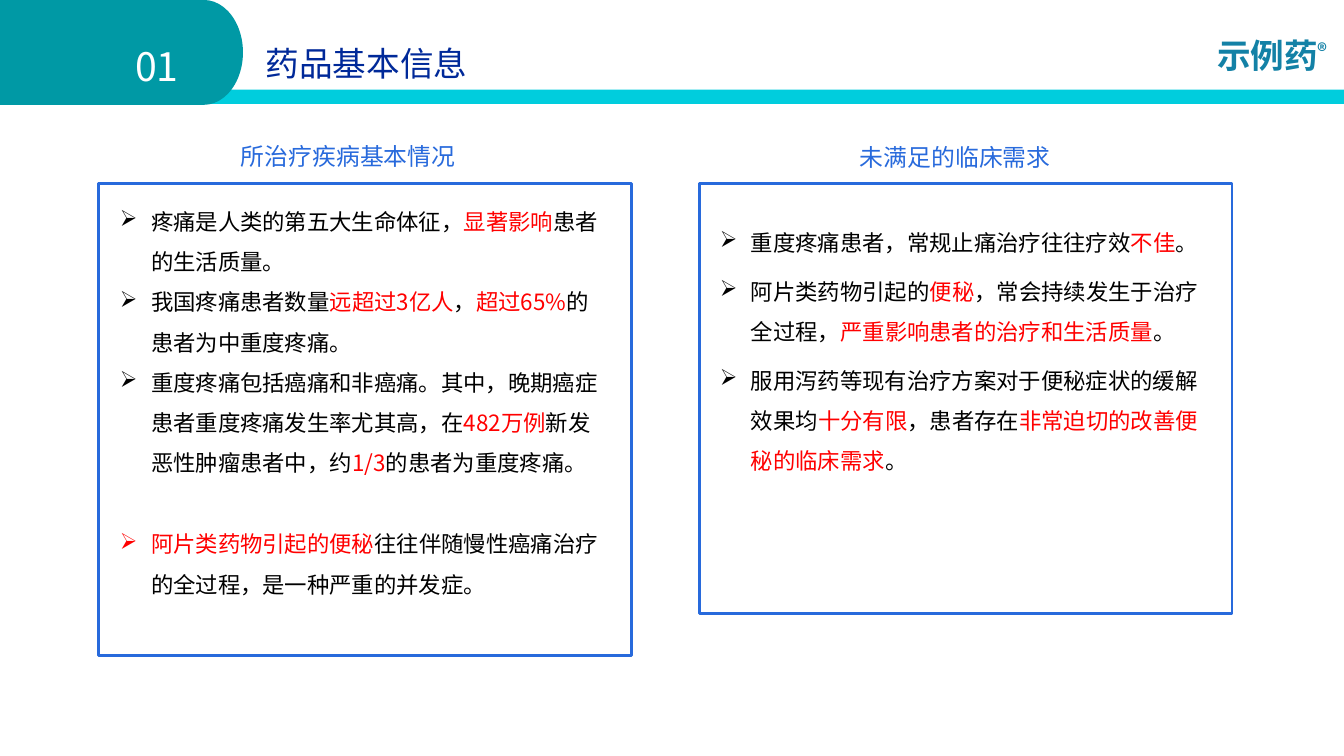
from lxml.etree import SubElement
from pptx import Presentation
from pptx.dml.color import RGBColor
from pptx.enum.shapes import MSO_SHAPE
from pptx.enum.text import MSO_AUTO_SIZE, PP_ALIGN
from pptx.oxml.ns import qn
from pptx.util import Emu, Pt

FONT = "Noto Sans CJK SC"
TEAL, CYAN, BLUE = "0099A5", "00CDDD", "286ADC"
RED, BLACK = "FF0000", "000000"

DISEASE = [
    "疼痛是人类的第五大生命体征，*显著影响*患者的生活质量。",
    "我国疼痛患者数量*远超过3亿人*，*超过65%*的患者为中重度疼痛。",
    "重度疼痛包括癌痛和非癌痛。其中，晚期癌症患者重度疼痛发生率尤其高，在"
    "*482万例*新发恶性肿瘤患者中，约*1/3*的患者为重度疼痛。",
    "*阿片类药物引起的便秘*往往伴随慢性癌痛治疗的全过程，是一种严重的并发症。",
]
NEEDS = [
    "重度疼痛患者，常规止痛治疗往往疗效*不佳*。",
    "阿片类药物引起的*便秘*，常会持续发生于治疗全过程，"
    "*严重影响患者的治疗和生活质量*。",
    "服用泻药等现有治疗方案对于便秘症状的缓解效果均*十分有限*，"
    "患者存在*非常迫切的改善便秘的临床需求*。",
]


def px(n):
    """Turn px, 100 to the inch, into EMU."""
    return Emu(n * 9144)


def paint(color, value):
    color.rgb = RGBColor.from_string(value)


def block(slide, kind, box, fill=None, line=None):
    shape = slide.shapes.add_shape(kind, *map(px, box))
    shape.shadow.inherit = False
    if fill:
        shape.fill.solid()
        paint(shape.fill.fore_color, fill)
    else:
        shape.fill.background()
    if line:
        paint(shape.line.color, line)
        shape.line.width = Pt(2)
    else:
        shape.line.fill.background()


def bullet(para):
    props = para._p.get_or_add_pPr()
    props.set("marL", str(px(31)))
    props.set("indent", str(-px(31)))
    SubElement(props, qn("a:buChar")).set("char", "➢")


def write(slide, box, *lines, size, color=BLACK, bold=False, align=None,
          inset=True, wrap=True, space=None, after=None, marks=False):
    """Add a text box; the parts of a line between stars are red."""
    frame = slide.shapes.add_textbox(*map(px, box)).text_frame
    frame.word_wrap = wrap
    frame.auto_size = MSO_AUTO_SIZE.NONE
    if not inset:
        frame.margin_left = frame.margin_right = 0
        frame.margin_top = frame.margin_bottom = 0
    for i, line in enumerate(lines):
        para = frame.paragraphs[0] if i == 0 else frame.add_paragraph()
        para.alignment = align
        para.line_spacing = space
        para.space_after = after
        if marks:
            bullet(para)
        for j, part in enumerate(line.split("*")):
            if not part:
                continue
            run = para.add_run()
            run.text = part
            font = run.font
            font.name, font.size, font.bold = FONT, Pt(size), bold
            paint(font.color, RED if j % 2 else color)
            props = run._r.get_or_add_rPr()
            SubElement(props, qn("a:ea")).set("typeface", FONT)
            if part == "®":
                props.set("baseline", "30000")
    return frame


def header(slide):
    # The doubled star ends an empty red part, so ® gets its own run.
    write(slide, (1191, 10, 142, 64), "示例药**®", size=24, color="1381A6",
          bold=True, align=PP_ALIGN.CENTER, wrap=False, space=1.5)
    block(slide, MSO_SHAPE.RECTANGLE, (0, 89, 1333, 14), fill=CYAN)
    block(slide, MSO_SHAPE.FLOWCHART_TERMINATOR, (0, 0, 241, 104), fill=TEAL)
    block(slide, MSO_SHAPE.RECTANGLE, (0, 0, 112, 104), fill=TEAL)
    write(slide, (134, 42, 58, 63), "01", size=28, color="FFFFFF", inset=False)
    write(slide, (229, 43, 269, 74), "药品基本信息", size=24, color="002999",
          align=PP_ALIGN.CENTER, inset=False)


def panel(slide, left, high, title, start):
    write(slide, (*start, 265, 39), title, size=17, color=BLUE)
    block(slide, MSO_SHAPE.RECTANGLE, (left, 182, 528, high), line=BLUE)


def main():
    deck = Presentation()
    deck.slide_width, deck.slide_height = px(1333), px(750)
    slide = deck.slides.add_slide(deck.slide_layouts[6])
    header(slide)
    panel(slide, 98, 468, "所治疗疾病基本情况", (229, 136))
    panel(slide, 694, 427, "未满足的临床需求", (843, 137))
    body = {"size": 16, "space": 1.5, "marks": True}
    facts = write(slide, (109, 188, 500, 414), *DISEASE, **body)
    facts.paragraphs[-1].space_before = Pt(29)
    write(slide, (704, 209, 508, 265), *NEEDS, after=Pt(6), **body)
    deck.save("out.pptx")


if __name__ == "__main__":
    main()
